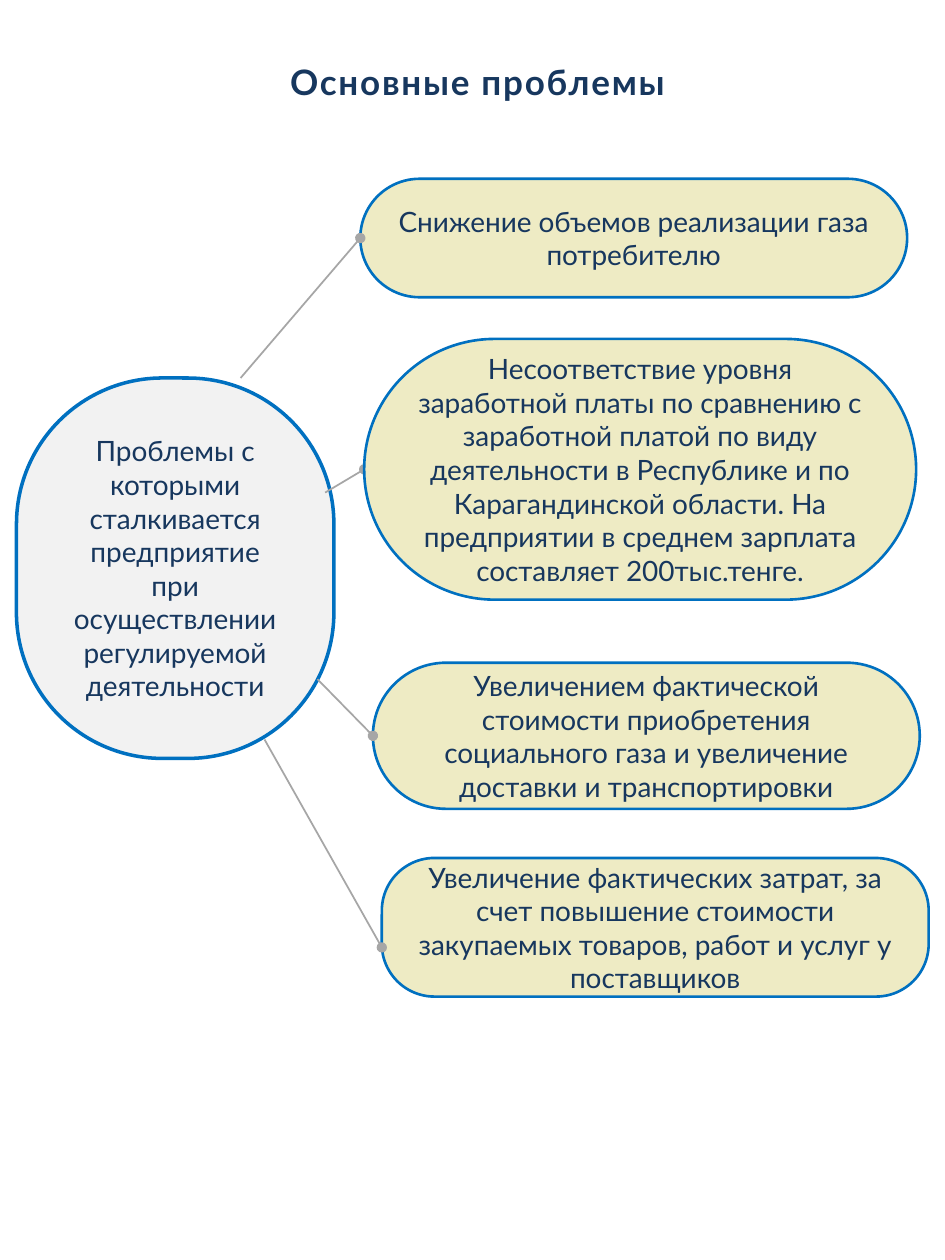
from lxml.etree import SubElement
from pptx import Presentation
from pptx.dml.color import RGBColor
from pptx.enum.shapes import MSO_CONNECTOR as Conn, MSO_SHAPE as Kind
from pptx.enum.text import MSO_ANCHOR as Anchor, PP_ALIGN as Align
from pptx.oxml.ns import qn
from pptx.util import Pt

NAVY = RGBColor(0x17, 0x37, 0x5E)
BLUE = RGBColor(0x00, 0x70, 0xC0)
CREAM = RGBColor(0xEE, 0xEB, 0xC4)
PALE = RGBColor(0xF2, 0xF2, 0xF2)
GREY = RGBColor(0xA6, 0xA6, 0xA6)
FONT = "Lato"

TITLE = "Основные проблемы"
HUB = ("Проблемы с которыми сталкивается предприятие при "
       "осуществлении регулируемой деятельности")
ISSUES = [
    dict(text="Снижение объемов реализации газа потребителю",
         box=(205.9, 102.2, 312.5, 67.7), bend=0.5, start=(137.5, 216)),
    dict(text="Несоответствие уровня заработной платы по сравнению с "
              "заработной платой по виду деятельности в Республике и по "
              "Карагандинской области. На предприятии в среднем зарплата "
              "составляет 200тыс.тенге.",
         box=(208.1, 193.7, 315.4, 149), bend=0.5, start=(185.8, 281.5),
         under=True),
    dict(text="Увеличением фактической стоимости приобретения социального "
              "газа и увеличение доставки и транспортировки",
         box=(213.1, 378.7, 312.5, 83.5), bend=0.5, start=(181.4, 388.1)),
    dict(text="Увеличение фактических затрат, за счет повышение стоимости "
              "закупаемых товаров, работ и услуг у поставщиков",
         box=(218.2, 490.3, 312.5, 79.2), bend=0.38, start=(151.2, 422.6),
         end=(218.2, 541.4)),
]


def write(frame, text, size):
    frame.word_wrap = True
    para = frame.paragraphs[0]
    para.text = text
    para.alignment = Align.CENTER
    para.font.name = FONT
    para.font.size = Pt(size)
    para.font.color.rgb = NAVY
    return para


def add_box(text, box, bend, fill, width):
    shape = slide.shapes.add_shape(Kind.ROUNDED_RECTANGLE, *map(Pt, box))
    shape.shadow.inherit = False
    shape.adjustments[0] = bend
    shape.fill.solid()
    shape.fill.fore_color.rgb = fill
    shape.line.color.rgb = BLUE
    shape.line.width = Pt(width)
    shape.text_frame.vertical_anchor = Anchor.MIDDLE
    write(shape.text_frame, text, 16)
    return shape


def add_link(start, end):
    link = slide.shapes.add_connector(Conn.STRAIGHT, *map(Pt, start + end))
    link.line.color.rgb = GREY
    link.line.width = Pt(1)
    SubElement(link.line._get_or_add_ln(), qn("a:tailEnd"), type="oval")
    SubElement(link._element.spPr, qn("a:effectLst"))
    return link


deck = Presentation()
deck.slide_width, deck.slide_height = Pt(540), Pt(720)
slide = deck.slides.add_slide(deck.slide_layouts[6])

title = slide.shapes.add_textbox(Pt(2.9), Pt(31), Pt(540), Pt(31.5))
para = write(title.text_frame, TITLE, 20)
para.font.bold = True
para.runs[0].font._element.set("spc", "100")

add_box(HUB, (9.4, 216, 181.4, 217.4), 0.46, PALE, 2)

for issue in ISSUES:
    left, top, wide, high = issue["box"]
    box = add_box(issue["text"], issue["box"], issue["bend"], CREAM, 1.5)
    link = add_link(issue["start"], issue.get("end", (left, top + high / 2)))
    if "end" not in issue:
        link.end_connect(box, 1)
    if issue.get("under"):
        link._element.addnext(box._element)

deck.save("out.pptx")
